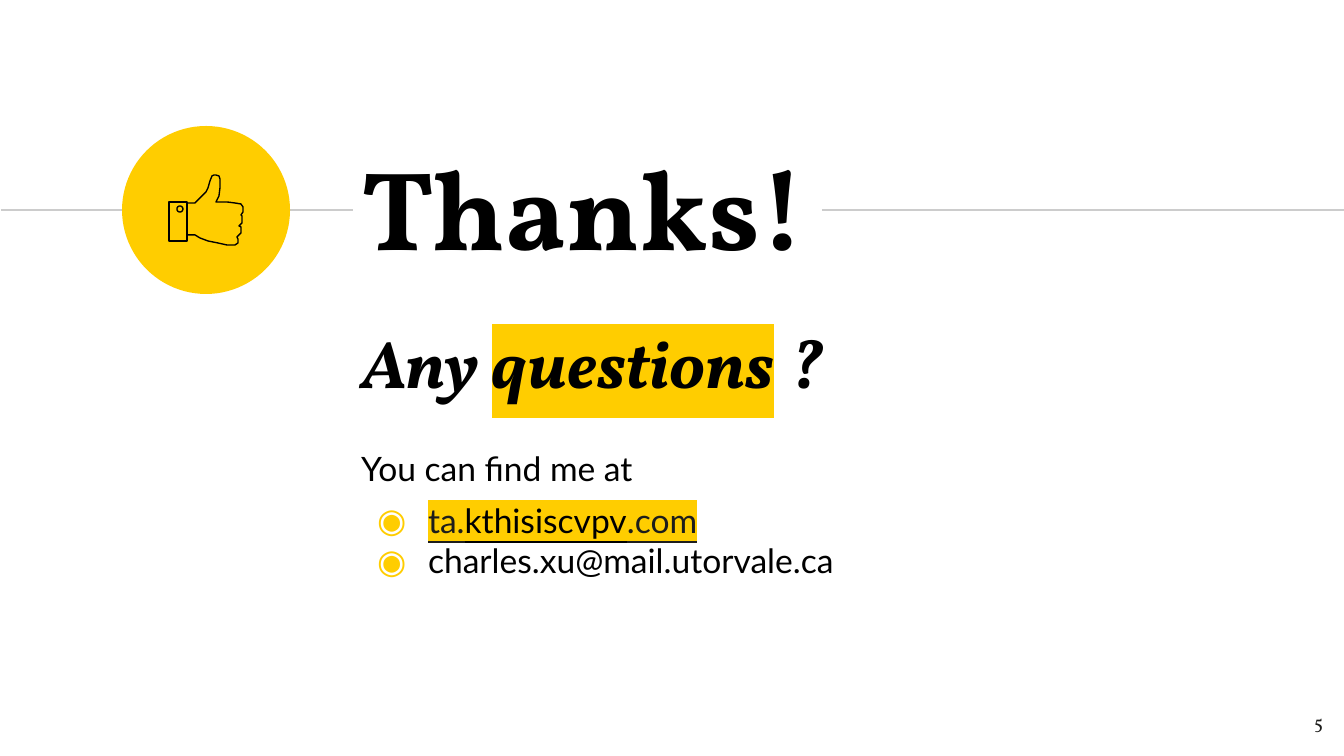
import math
from dataclasses import dataclass
from typing import NamedTuple

from lxml import etree
from pptx import Presentation
from pptx.dml.color import RGBColor
from pptx.enum.shapes import MSO_CONNECTOR, MSO_SHAPE
from pptx.enum.text import MSO_ANCHOR, MSO_AUTO_SIZE, PP_ALIGN
from pptx.oxml.ns import qn
from pptx.util import Emu, Pt

STRAIGHT = MSO_CONNECTOR.STRAIGHT
OVAL = MSO_SHAPE.OVAL
TOP, MIDDLE = MSO_ANCHOR.TOP, MSO_ANCHOR.MIDDLE
LEFT, RIGHT = PP_ALIGN.LEFT, PP_ALIGN.RIGHT
NO_AUTOFIT = MSO_AUTO_SIZE.NONE
TITLE_ONLY = 5
EMU_PER_PX = 914400 / 134.4


@dataclass(frozen=True)
class Theme:
    black: str = "000000"
    ink: str = "1D1D1B"
    yellow: str = "FFCD00"
    rule: str = "CCCCCC"
    serif: str = "Vollkorn"
    sans: str = "Lato"
    title_size: int = 60
    question_size: int = 36
    body_size: int = 18
    number_size: int = 10
    line_width: float = 0.75


class Box(NamedTuple):
    left: int
    top: int
    width: int
    height: int


class Rule(NamedTuple):
    start: int
    end: int


class Piece(NamedTuple):
    text: str
    color: str
    marked: bool = False


class Contact(NamedTuple):
    pieces: tuple[Piece, ...]
    space_before: int
    underline: bool


THEME = Theme()
INSET = 13
RULE_Y = 210
BULLET_MARGIN, BULLET_INDENT = 67, -51

RULES = (Rule(1, 353), Rule(822, 1344))
CONTACTS = (
    Contact((Piece("ta.", THEME.ink, True), Piece("kthisiscvpv", THEME.black, True),
             Piece(".com", THEME.ink, True)), 6, True),
    Contact((Piece("charles.xu@mail.utorvale.ca", THEME.black),), 0, False),
)
QUESTION = (Piece("Any ", THEME.black), Piece("questions", THEME.black, True),
            Piece(" ?", THEME.black))

CUFF = ((169, 202), (169, 241), (187, 241), (187, 202))
BUTTON = tuple((180 + 3 * math.cos(math.tau * step / 24),
                209 + 3 * math.sin(math.tau * step / 24)) for step in range(24))
HAND = (
    (188, 235), (195, 235), (200, 238), (208, 241), (218, 243), (227, 245),
    (235, 245), (238, 243), (238, 239), (237, 237), (239, 235), (241, 233),
    (241, 227), (239, 226), (242, 223), (242, 216), (241, 215), (243, 212),
    (243, 207), (241, 204), (235, 203), (227, 202), (216, 202), (219, 196),
    (220, 188), (220, 179), (219, 176), (216, 175), (214, 175), (212, 176),
    (210, 181), (208, 188), (206, 192), (199, 199), (195, 203), (188, 203),
)


def px(value: float) -> Emu:
    return Emu(round(value * EMU_PER_PX))


def rgb(color: str) -> RGBColor:
    return RGBColor.from_string(color)


def place(shape, box: Box) -> None:
    shape.left, shape.top, shape.width, shape.height = map(px, box)


def prepare_frame(shape, anchor=TOP):
    frame = shape.text_frame
    frame.word_wrap = True
    frame.auto_size = NO_AUTOFIT
    frame.vertical_anchor = anchor
    frame.margin_left = frame.margin_right = px(INSET)
    frame.margin_top = frame.margin_bottom = px(INSET)
    return frame


def add_text(paragraph, text: str, *, size: int, font: str, color: str,
             bold: bool = False, italic: bool = False,
             underline: bool = False, highlight: str | None = None) -> None:
    run = paragraph.add_run()
    run.text = text
    run.font.size = Pt(size)
    run.font.name = font
    run.font.bold, run.font.italic = bold, italic
    run.font.underline = underline
    run.font.color.rgb = rgb(color)
    if highlight:
        mark = etree.Element(qn("a:highlight"))
        etree.SubElement(mark, qn("a:srgbClr"), val=highlight)
        run.font.fill._xPr.find(qn("a:latin")).addprevious(mark)


def add_pieces(paragraph, pieces: tuple[Piece, ...], **style) -> None:
    for piece in pieces:
        add_text(paragraph, piece.text, color=piece.color,
                 highlight=THEME.yellow if piece.marked else None, **style)


def add_bullet(paragraph) -> None:
    properties = paragraph._p.get_or_add_pPr()
    properties.set("marL", str(px(BULLET_MARGIN)))
    properties.set("indent", str(px(BULLET_INDENT)))
    tint = etree.SubElement(properties, qn("a:buClr"))
    etree.SubElement(tint, qn("a:srgbClr"), val=THEME.yellow)
    etree.SubElement(properties, qn("a:buFont"), typeface=THEME.sans)
    etree.SubElement(properties, qn("a:buChar"), char="◉")


def draw_rule(slide, rule: Rule) -> None:
    line = slide.shapes.add_connector(
        STRAIGHT, px(rule.start), px(RULE_Y), px(rule.end), px(RULE_Y))
    line.line.color.rgb = rgb(THEME.rule)
    line.line.width = Pt(THEME.line_width)
    etree.SubElement(line._element.spPr, qn("a:effectLst"))


def draw_outline(slide, *contours, closed: bool = True) -> None:
    first, *others = [[(px(x), px(y)) for x, y in contour] for contour in contours]
    builder = slide.shapes.build_freeform(*first[0])
    builder.add_line_segments(first[1:], close=closed)
    for contour in others:
        builder.move_to(*contour[0])
        builder.add_line_segments(contour[1:], close=closed)
    outline = builder.convert_to_shape()
    outline.shadow.inherit = False
    outline.fill.background()
    outline.line.color.rgb = rgb(THEME.black)
    outline.line.width = Pt(THEME.line_width)


def draw_badge(slide) -> None:
    badge = slide.shapes.add_shape(OVAL, *map(px, Box(122, 126, 168, 168)))
    badge.shadow.inherit = False
    badge.fill.solid()
    badge.fill.fore_color.rgb = rgb(THEME.yellow)
    badge.line.fill.background()
    draw_outline(slide, CUFF, BUTTON)
    draw_outline(slide, HAND, closed=False)


def write_title(slide) -> None:
    title = slide.shapes.title
    place(title, Box(348, 120, 722, 171))
    paragraph = prepare_frame(title, MIDDLE).paragraphs[0]
    paragraph.alignment = LEFT
    add_text(paragraph, "Thanks!", size=THEME.title_size, font=THEME.serif,
             color=THEME.black, bold=True)


def write_message(slide) -> None:
    message = slide.shapes.add_textbox(*map(px, Box(348, 308, 738, 116)))
    frame = prepare_frame(message)
    add_pieces(frame.paragraphs[0], QUESTION, size=THEME.question_size,
               font=THEME.serif, bold=True, italic=True)
    intro = frame.add_paragraph()
    intro.space_before = Pt(25)
    add_text(intro, "You can find me at", size=THEME.body_size,
             font=THEME.sans, color=THEME.black)
    for contact in CONTACTS:
        entry = frame.add_paragraph()
        entry.space_before = Pt(contact.space_before)
        add_bullet(entry)
        add_pieces(entry, contact.pieces, size=THEME.body_size,
                   font=THEME.sans, underline=contact.underline)


def write_page_number(slide) -> None:
    number = slide.shapes.add_textbox(*map(px, Box(1255, 698, 81, 58)))
    paragraph = prepare_frame(number).paragraphs[0]
    paragraph.alignment = RIGHT
    add_text(paragraph, "5", size=THEME.number_size, font=THEME.serif, color=THEME.ink)


def main() -> None:
    deck = Presentation()
    deck.slide_width, deck.slide_height = px(1344), px(756)
    slide = deck.slides.add_slide(deck.slide_layouts[TITLE_ONLY])
    write_title(slide)
    write_message(slide)
    for rule in RULES:
        draw_rule(slide, rule)
    draw_badge(slide)
    write_page_number(slide)
    deck.save("out.pptx")


if __name__ == "__main__":
    main()
